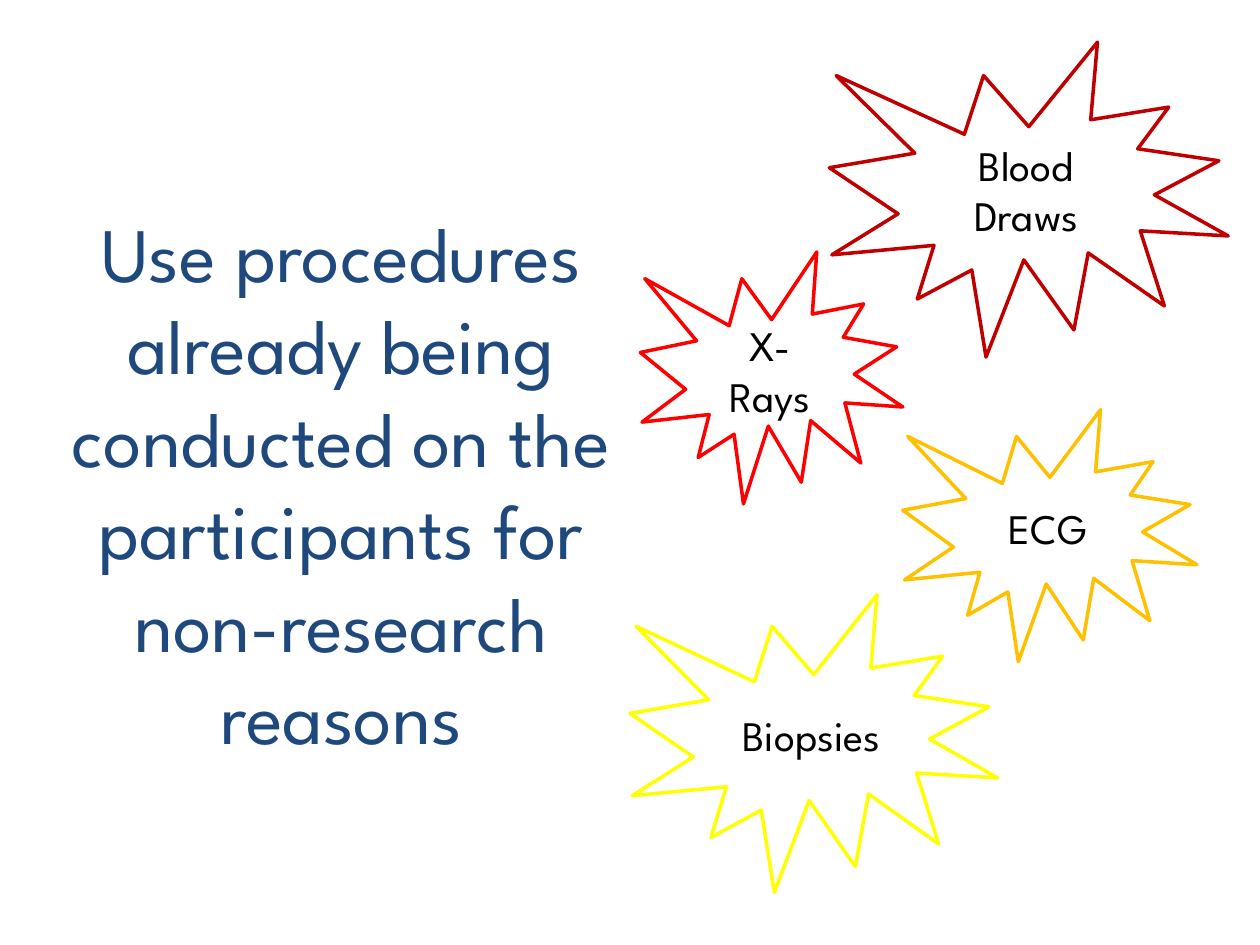
"""Build a slide on reusing routine procedures, with four example bursts."""
from typing import NamedTuple

from pptx import Presentation
from pptx.dml.color import RGBColor
from pptx.enum.shapes import MSO_SHAPE as Shp
from pptx.enum.text import MSO_ANCHOR as Anchor, PP_ALIGN as Align
from pptx.util import Cm, Pt

FONT = "League Spartan"
NAVY = RGBColor(0x1F, 0x49, 0x7D)
BLACK = RGBColor(0x00, 0x00, 0x00)
WHITE = RGBColor(0xFF, 0xFF, 0xFF)
RED = RGBColor(0xFF, 0x00, 0x00)
ORANGE = RGBColor(0xFF, 0xC0, 0x00)
YELLOW = RGBColor(0xFF, 0xFF, 0x00)
DARK_RED = RGBColor(0xC0, 0x00, 0x00)


class Burst(NamedTuple):
    text: str
    left: float
    top: float
    width: float
    height: float
    color: RGBColor


BURSTS = (
    Burst("X-Rays", 12.91, 5.08, 5.29, 5.08, RED),
    Burst("ECG", 18.2, 8.26, 5.93, 5.08, ORANGE),
    Burst("Biopsies", 12.7, 11.99, 7.41, 6, YELLOW),
    Burst("Blood Draws", 16.72, 0.85, 8.04, 6.35, DARK_RED),
)


def set_text(sp, text: str, *, size: float, color: RGBColor, anchor: Anchor) -> None:
    """Write centred, wrapped text into a shape."""
    tf = sp.text_frame
    tf.word_wrap = True
    tf.vertical_anchor = anchor
    p = tf.paragraphs[0]
    p.alignment = Align.CENTER
    r = p.add_run()
    r.text = text
    r.font.name = FONT
    r.font.size = Pt(size)
    r.font.color.rgb = color


def add_burst(s, burst: Burst) -> None:
    """Draw one outlined burst with its label."""
    sp = s.shapes.add_shape(Shp.EXPLOSION1, Cm(burst.left), Cm(burst.top),
                            Cm(burst.width), Cm(burst.height))
    sp.shadow.inherit = False
    sp.fill.solid()
    sp.fill.fore_color.rgb = WHITE
    sp.line.color.rgb = burst.color
    sp.line.width = Pt(2)
    set_text(sp, burst.text, size=24, color=BLACK, anchor=Anchor.MIDDLE)


def main() -> None:
    """Create and save the presentation."""
    prs = Presentation()
    prs.slide_width, prs.slide_height = Cm(25.4), Cm(19.05)
    s = prs.slides.add_slide(prs.slide_layouts[6])
    message = s.shapes.add_textbox(Cm(1.06), Cm(4.02), Cm(11.64), Cm(11.85))
    set_text(message, "Use procedures already being conducted on the participants "
             "for non-research reasons", size=44, color=NAVY, anchor=Anchor.TOP)
    for burst in BURSTS:
        add_burst(s, burst)
    prs.save("out.pptx")


if __name__ == "__main__":
    main()
